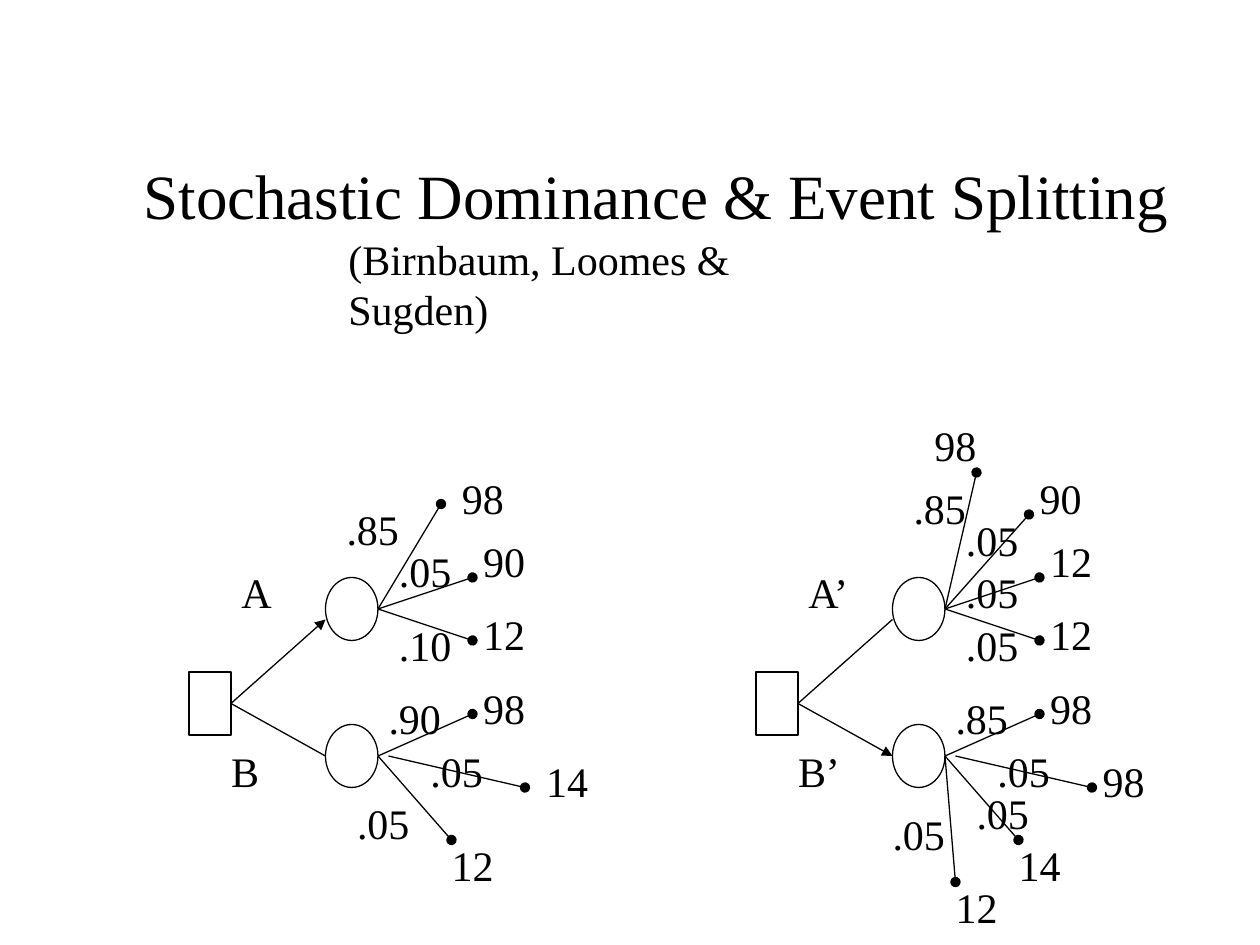
from lxml import etree
from pptx import Presentation
from pptx.dml.color import RGBColor
from pptx.enum.shapes import MSO_CONNECTOR, MSO_SHAPE
from pptx.enum.text import MSO_ANCHOR, PP_ALIGN
from pptx.oxml.ns import qn
from pptx.util import Inches, Pt

RECT, OVAL = MSO_SHAPE.RECTANGLE, MSO_SHAPE.OVAL
STRAIGHT = MSO_CONNECTOR.STRAIGHT
MIDDLE, TOP = MSO_ANCHOR.MIDDLE, MSO_ANCHOR.TOP
CENTER, LEFT = PP_ALIGN.CENTER, PP_ALIGN.LEFT
FONT, BLACK = "Times New Roman", "000000"

# Grid of twelve units to the inch; x counts from a tree's left edge
UPPER, LOWER = (18, 58), (18, 72)
LOWER_GAP = (19, 72)

# Branch: start, tip, probability, its place, payoff, its place
TREES = [
    {"left": 18, "names": ("A", "B"), "chosen": 0, "branches": [
        (UPPER, (24, 48), ".85", (9, 48), "98", (20, 45)),
        (UPPER, (27, 55), ".05", (14, 52), "90", (22, 51)),
        (UPPER, (27, 61), ".10", (14, 59), "12", (22, 58)),
        (LOWER, (27, 68), ".90", (13, 66), "98", (22, 65)),
        (LOWER_GAP, (32, 75), ".05", (17, 71), "14", (28, 72)),
        (LOWER, (25, 80), ".05", (10, 76), "12", (19, 80)),
    ]},
    {"left": 72, "names": ("A’", "B’"), "chosen": 1, "branches": [
        (UPPER, (21, 45), ".85", (9, 46), "98", (11, 40)),
        (UPPER, (26, 49), ".05", (14, 49), "90", (21, 45)),
        (UPPER, (27, 55), ".05", (14, 54), "12", (22, 51)),
        (UPPER, (27, 61), ".05", (14, 59), "12", (22, 58)),
        (LOWER, (27, 68), ".85", (13, 66), "98", (22, 65)),
        (LOWER_GAP, (32, 75), ".05", (17, 71), "98", (27, 72)),
        (LOWER, (25, 80), ".05", (15, 75), "14", (19, 80)),
        (LOWER, (19, 84), ".05", (7, 77), "12", (13, 84)),
    ]},
]


def u(n):
    return Inches(n / 12)


def color(fmt, hex_value):
    fmt.rgb = RGBColor.from_string(hex_value)


def set_line(line):
    color(line.color, BLACK)
    line.width = Pt(0.75)


def add_text(shapes, text, x, y, w, h, size=24, align=LEFT, **frame):
    sp = shapes.add_textbox(u(x), u(y), u(w), u(h))
    tf = sp.text_frame
    for name, value in {"word_wrap": True, **frame}.items():
        setattr(tf, name, value)
    p = tf.paragraphs[0]
    p.alignment = align
    r = p.add_run()
    r.text = text
    for name, value in {"name": FONT, "size": Pt(size)}.items():
        setattr(r.font, name, value)
    color(r.font.color, BLACK)
    return p


def add_label(shapes, text, x, y):
    p = add_text(shapes, text, x, y, 14, 6, vertical_anchor=TOP, margin_left=0,
                 margin_top=0, margin_right=Inches(0.1), margin_bottom=0)
    pPr = p._p.get_or_add_pPr()
    for name, value in {"marL": 0.81, "indent": -0.31}.items():
        pPr.set(name, str(Inches(value)))


def add_node(shapes, kind, x, y, w, h):
    sp = shapes.add_shape(kind, u(x), u(y), u(w), u(h))
    sp.shadow.inherit = False
    sp.fill.background()
    set_line(sp.line)


def add_line(shapes, left, start, end, tail=None):
    cx = shapes.add_connector(STRAIGHT, u(left + start[0]), u(start[1]),
                              u(left + end[0]), u(end[1]))
    set_line(cx.line)
    spPr = cx._element.spPr
    etree.SubElement(spPr, qn("a:effectLst"))
    if tail:
        etree.SubElement(spPr.find(qn("a:ln")), qn("a:tailEnd"), type=tail)


def add_tree(slide, left, names, chosen, branches):
    shapes = slide.shapes.add_group_shape().shapes

    # Decision square, its two choices and their chance circles
    add_node(shapes, RECT, left, 64, 4, 6)
    for i, end in enumerate([(13, 59), (13, 72)]):
        add_line(shapes, left, (4, 67), end, "triangle" if i == chosen else None)
    for _, hub_y in (UPPER, LOWER):
        add_node(shapes, OVAL, left + 13, hub_y - 3, 5, 6)
    for name, (x, y) in zip(names, [(-1, 54), (-2, 71)]):
        add_label(shapes, name, left + x, y)

    # Outcomes
    for start, tip, prob, prob_at, payoff, payoff_at in branches:
        add_line(shapes, left, start, tip, "oval")
        for text, (x, y) in ((prob, prob_at), (payoff, payoff_at)):
            add_label(shapes, text, left + x, y)


def main():
    prs = Presentation()
    prs.slide_width, prs.slide_height = Inches(10), Inches(7.5)
    slide = prs.slides.add_slide(prs.slide_layouts[6])

    # Headings
    add_text(slide.shapes, "Stochastic Dominance & Event Splitting",
             10, 11, 105, 15, size=36, align=CENTER, vertical_anchor=MIDDLE)
    add_text(slide.shapes, "(Birnbaum, Loomes & Sugden)",
             32, 24, 53, 6, vertical_anchor=MIDDLE, word_wrap=False)

    # Decision trees
    for tree in TREES:
        add_tree(slide, **tree)
    prs.save("out.pptx")


if __name__ == "__main__":
    main()
